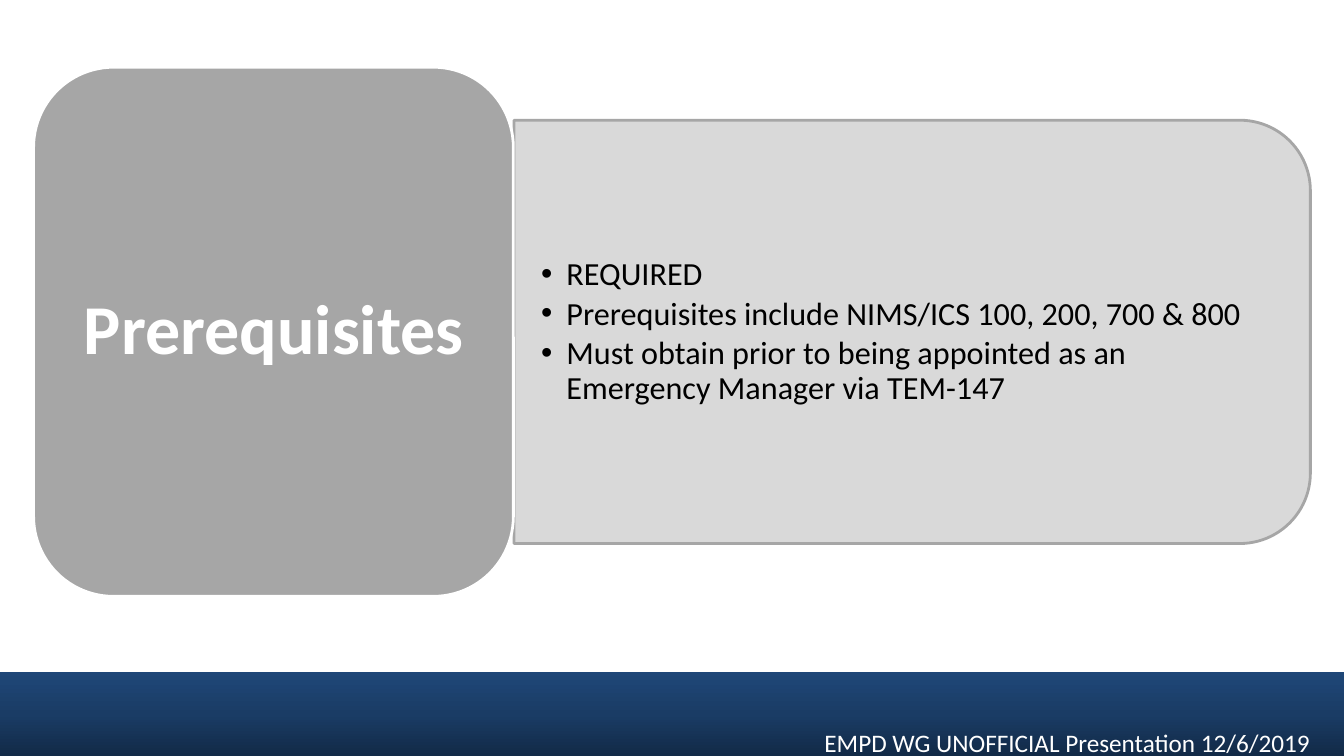
import copy
from dataclasses import dataclass

import pptx
import pptx.dml.color
import pptx.enum.shapes
import pptx.enum.text
import pptx.oxml.ns
import pptx.util

Pt = pptx.util.Pt
Shape = pptx.enum.shapes.MSO_SHAPE
Align = pptx.enum.text.PP_ALIGN
Anchor = pptx.enum.text.MSO_ANCHOR
qn = pptx.oxml.ns.qn


@dataclass(frozen=True)
class Theme:
    font: str = "Calibri"
    white: str = "FFFFFF"
    black: str = "000000"
    card: str = "A6A6A6"
    panel: str = "D9D9D9"
    band: tuple = ((0, "122A47"), (0.5, "1A3C65"), (1, "1F4778"))
    title_size: int = 50
    list_size: int = 23
    footer_size: int = 18
    outline: int = 2


THEME = Theme()

REQUIREMENTS = (
    "REQUIRED",
    "Prerequisites include NIMS/ICS 100, 200, 700 & 800",
    "Must obtain prior to being appointed as an Emergency Manager via TEM-147",
)


def rgb(value):
    return pptx.dml.color.RGBColor.from_string(value)


def apply(target, formats):
    for name, value in formats.items():
        setattr(target, name, value)


def place(shape, left, top, width, height):
    apply(shape, {"left": Pt(left), "top": Pt(top), "width": Pt(width), "height": Pt(height)})


def add_outlined(page, kind, frame, fill, line, rotation=0):
    shape = page.shapes.add_shape(kind, *map(Pt, frame))
    shape.shadow.inherit = False
    shape.rotation = rotation
    shape.fill.solid()
    shape.fill.fore_color.rgb = rgb(fill)
    shape.line.color.rgb = rgb(line)
    shape.line.width = Pt(THEME.outline)


def add_band(page, frame):
    """Draw the footer band, dark at the bottom and lighter at the top."""
    band = page.shapes.add_shape(Shape.RECTANGLE, *map(Pt, frame))
    band.shadow.inherit = False
    band.line.fill.background()
    band.fill.gradient()
    band.fill.gradient_angle = 90
    stop_list = next(band.element.iter(qn("a:gsLst")))
    stop_list.insert(1, copy.deepcopy(stop_list[0]))
    for stop, (position, color) in zip(band.fill.gradient_stops, THEME.band):
        stop.position = position
        stop.color.rgb = rgb(color)


def bring_to_front(shape):
    shape.element.getparent().append(shape.element)


def write(box, lines, size, color, bold=False, insets=(7.2, 3.6), paragraph_formats=None, bulleted=False):
    text = box.text_frame
    apply(text, {
        "word_wrap": True,
        "auto_size": pptx.enum.text.MSO_AUTO_SIZE.NONE,
        "margin_left": Pt(insets[0]), "margin_right": Pt(insets[0]),
        "margin_top": Pt(insets[1]), "margin_bottom": Pt(insets[1]),
    })
    text.text = "\n".join(lines)
    for para in text.paragraphs:
        if bulleted:
            add_bullet(para)
        apply(para, {"space_before": Pt(0), **(paragraph_formats or {})})
        for span in para.runs:
            apply(span.font, {"name": THEME.font, "size": Pt(size), "bold": bold})
            span.font.color.rgb = rgb(color)


def add_bullet(para, indent=18):
    properties = para._p.get_or_add_pPr()
    properties.set("marL", str(Pt(indent)))
    properties.set("indent", str(-Pt(indent)))
    bullet = properties.makeelement(qn("a:buChar"), {"char": "•"})
    properties.append(bullet)


def fill_placeholder(box, frame, lines, size, color, **formats):
    place(box, *frame)
    bring_to_front(box)
    write(box, lines, size, color, **formats)
    box.text_frame.vertical_anchor = Anchor.MIDDLE


def main():
    deck = pptx.Presentation()
    apply(deck, {"slide_width": Pt(960), "slide_height": Pt(540)})
    page = deck.slides.add_slide(deck.slide_layouts[1])
    title, body = page.placeholders

    add_band(page, (-52, 480, 1064, 60))
    add_outlined(page, Shape.ROUND_2_SAME_RECTANGLE, (500.4, -47.3, 302.4, 568.8),
                 THEME.panel, THEME.card, rotation=90)
    fill_placeholder(body, (367.2, 100.8, 554.4, 272.9), REQUIREMENTS, THEME.list_size, THEME.black,
                     insets=(19.4, 10), bulleted=True,
                     paragraph_formats={"line_spacing": 0.9, "space_after": Pt(3.5),
                                        "alignment": Align.LEFT})
    add_outlined(page, Shape.ROUNDED_RECTANGLE, (24, 48, 342.7, 378), THEME.card, THEME.white)
    fill_placeholder(title, (41, 65, 309.6, 344), ["Prerequisites"], THEME.title_size, THEME.white,
                     bold=True, insets=(15, 7.2),
                     paragraph_formats={"line_spacing": 0.9, "alignment": Align.CENTER})
    footer = page.shapes.add_textbox(*map(Pt, (581.8, 516.2, 402.5, 28.8)))
    write(footer, ["EMPD WG UNOFFICIAL Presentation 12/6/2019"], THEME.footer_size, THEME.white)

    deck.save("out.pptx")


if __name__ == "__main__":
    main()
